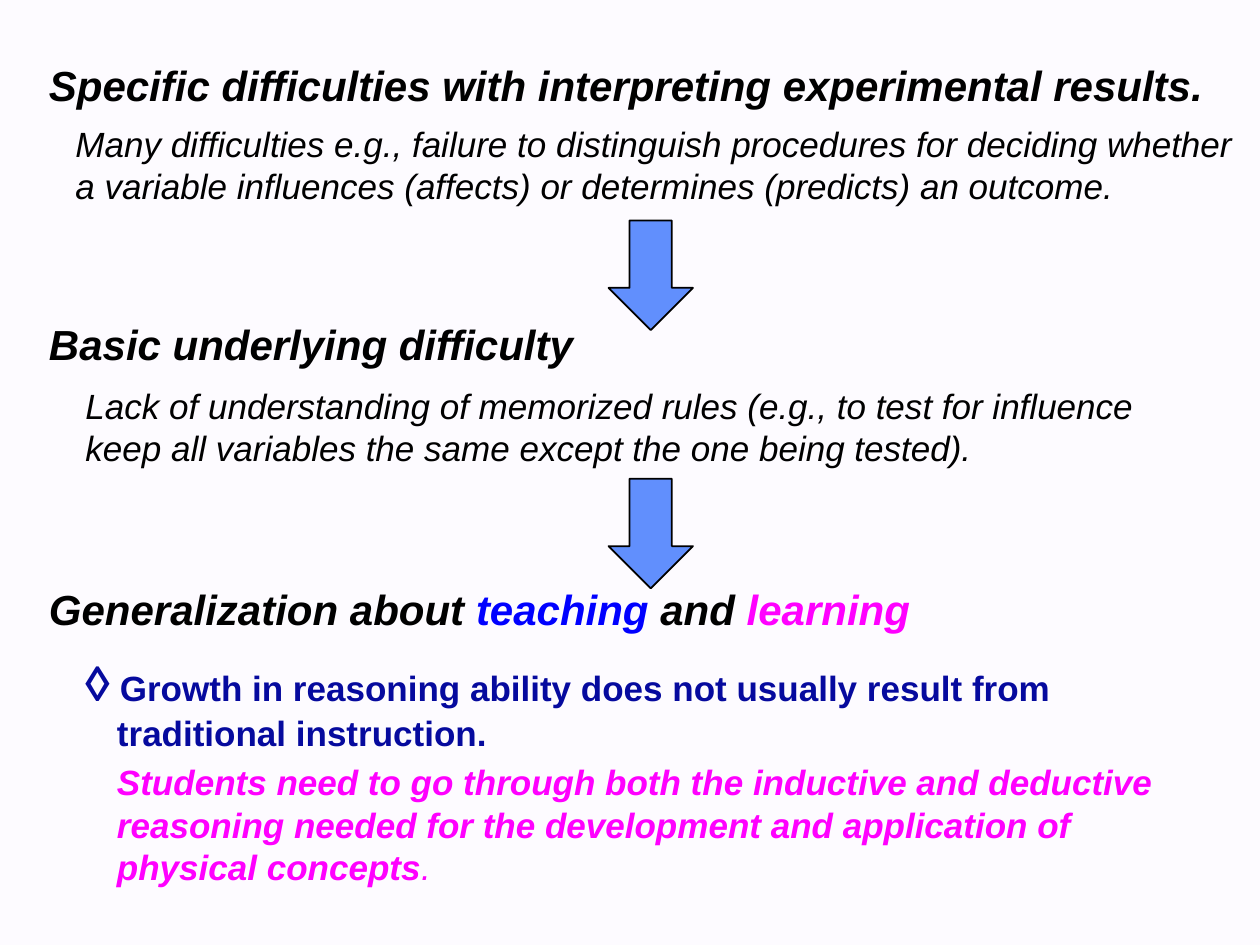
from typing import NamedTuple

from pptx import Presentation
from pptx.dml.color import RGBColor
from pptx.enum.shapes import MSO_SHAPE
from pptx.enum.text import MSO_ANCHOR, MSO_AUTO_SIZE, PP_ALIGN
from pptx.util import Inches, Pt

DOWN_ARROW = MSO_SHAPE.DOWN_ARROW
FIT_SHAPE = MSO_AUTO_SIZE.SHAPE_TO_FIT_TEXT
TOP, MIDDLE = MSO_ANCHOR.TOP, MSO_ANCHOR.MIDDLE
LEFT = PP_ALIGN.LEFT

FONT = "Arial"
COLORS = {
    "background": "FDFBFF",
    "black": "000000",
    "teaching": "0000FF",
    "learning": "FF00FF",
    "navy": "060A9E",
    "arrow": "618FFD",
}
HEADING_LEFT = 0.29
BODY_LEFT = 0.58
HANGING_INDENT = 0.25


class Span(NamedTuple):
    text: str
    size: float
    color: str = "black"
    bold: bool = False
    italic: bool = True


class TextBlock(NamedTuple):
    left: float
    top: float
    width: float
    height: float
    paragraphs: list[list[Span]]
    hanging: bool = False
    wrap: bool = True
    anchor: MSO_ANCHOR = TOP


class Arrow(NamedTuple):
    top: float
    left: float = 4.83
    width: float = 0.67
    height: float = 0.87


def heading(text: str, color: str = "black") -> Span:
    return Span(text, 24, color, bold=True)


def body(text: str) -> list[list[Span]]:
    return [[Span(text, 20)]]


def rgb(name: str) -> RGBColor:
    return RGBColor.from_string(COLORS[name])


def add_text_block(page, block: TextBlock) -> None:
    box = page.shapes.add_textbox(Inches(block.left), Inches(block.top),
                                  Inches(block.width), Inches(block.height))
    frame = box.text_frame
    frame.word_wrap = block.wrap
    frame.auto_size = FIT_SHAPE
    frame.vertical_anchor = block.anchor
    for index, spans in enumerate(block.paragraphs):
        para = frame.add_paragraph() if index else frame.paragraphs[0]
        para.alignment = LEFT
        if block.hanging:
            properties = para._p.get_or_add_pPr()
            properties.set("marL", str(Inches(HANGING_INDENT)))
            properties.set("indent", str(-Inches(HANGING_INDENT)))
        for span in spans:
            run = para.add_run()
            run.text = span.text
            run.font.name = FONT
            run.font.size = Pt(span.size)
            run.font.bold = span.bold
            run.font.italic = span.italic
            run.font.color.rgb = rgb(span.color)


def add_arrow(page, arrow: Arrow) -> None:
    shape = page.shapes.add_shape(DOWN_ARROW, Inches(arrow.left), Inches(arrow.top),
                                  Inches(arrow.width), Inches(arrow.height))
    shape.shadow.inherit = False
    shape.fill.solid()
    shape.fill.fore_color.rgb = rgb("arrow")
    shape.line.color.rgb = rgb("black")
    shape.line.width = Pt(1)


TEXT_BLOCKS = [
    TextBlock(HEADING_LEFT, 0.42, 9.46, 0.5, [[
        heading("Specific difficulties with interpreting experimental results.")]]),
    TextBlock(0.5, 0.92, 9.47, 0.77, body(
        "Many difficulties e.g., failure to distinguish procedures for deciding whether "
        "a variable influences (affects) or determines (predicts) an outcome.")),
    TextBlock(HEADING_LEFT, 2.48, 4.48, 0.5,
              [[heading("Basic underlying difficulty")]], wrap=False),
    TextBlock(BODY_LEFT, 3, 9.08, 0.77, body(
        "Lack of understanding of memorized rules (e.g., to test for influence "
        "keep all variables the same except the one being tested).")),
    TextBlock(HEADING_LEFT, 4.58, 7.89, 0.5, [[
        heading("Generalization about "),
        heading("teaching ", "teaching"),
        heading("and "),
        heading("learning", "learning")]]),
    TextBlock(BODY_LEFT, 5.12, 9.08, 1.98, [
        [Span("◊", 28, "navy", bold=True, italic=False),
         Span(" ", 21, bold=True, italic=False),
         Span("Growth in reasoning ability does not usually result from "
              "traditional instruction.", 20, "navy", bold=True, italic=False)],
        [heading("\t", "learning"),
         Span("Students need to go through both the inductive and deductive "
              "reasoning needed for the development and application of "
              "physical concepts", 20, "learning", bold=True),
         Span(".", 20, "learning")],
    ], hanging=True, anchor=MIDDLE),
]
ARROWS = [Arrow(top=1.75), Arrow(top=3.8)]


def main() -> None:
    deck = Presentation()
    deck.slide_width, deck.slide_height = Inches(10), Inches(7.5)
    page = deck.slides.add_slide(deck.slide_layouts[6])
    page.background.fill.solid()
    page.background.fill.fore_color.rgb = rgb("background")
    for block in TEXT_BLOCKS:
        add_text_block(page, block)
    for arrow in ARROWS:
        add_arrow(page, arrow)
    deck.save("out.pptx")


if __name__ == "__main__":
    main()
